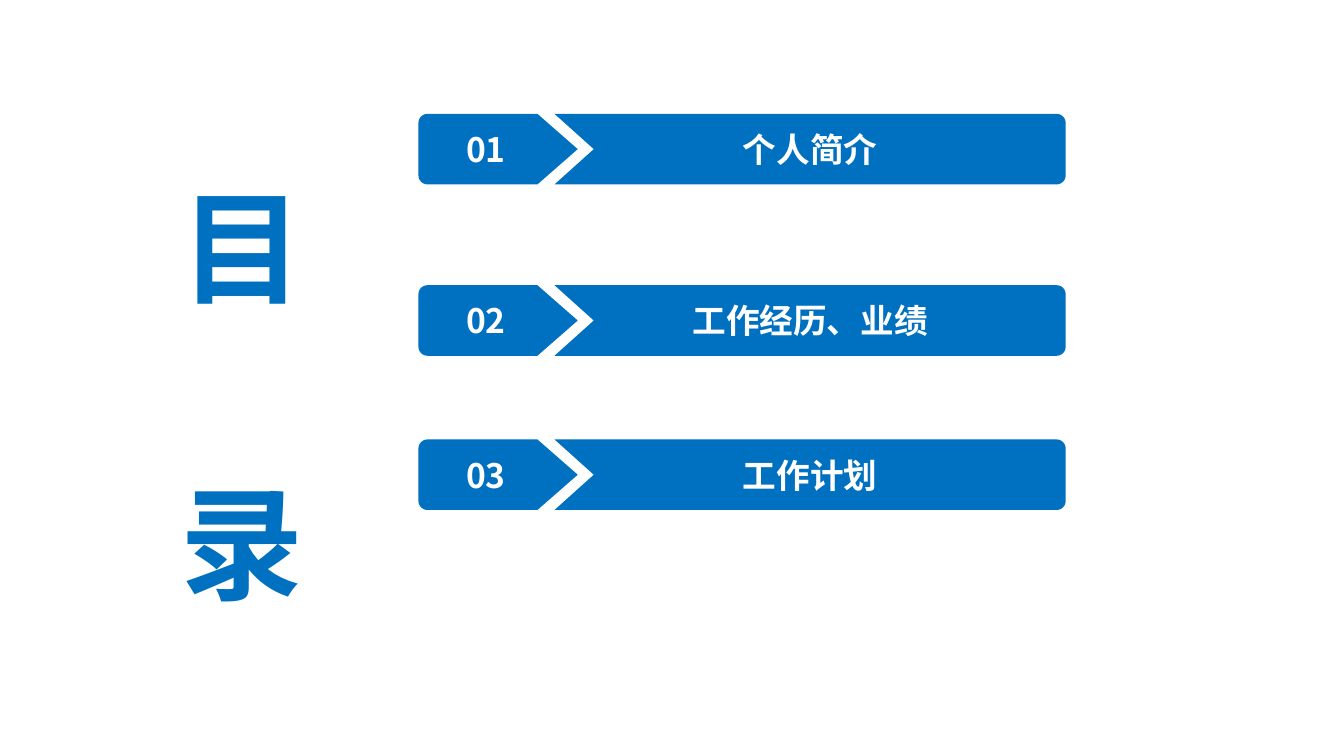
from math import cos, pi, sin

from pptx import Presentation
from pptx.dml.color import RGBColor
from pptx.enum.text import MSO_ANCHOR, MSO_AUTO_SIZE, PP_ALIGN
from pptx.oxml.xmlchemy import OxmlElement
from pptx.util import Inches, Pt

COLORS = {"blue": "0070C0", "white": "FFFFFF"}
FONT = "Noto Sans CJK SC"
ITEMS = [(1.13, "个人简介"), (2.83, "工作经历、业绩"), (4.36, "工作计划")]
RADIUS = 0.09


def write(s, text, size, color, align=PP_ALIGN.LEFT, anchor=MSO_ANCHOR.TOP,
          insets=(0.1, 0.05, 0.1, 0.05), line=None, spacing=None):
    """Put one bold paragraph into a shape."""
    tf = s.text_frame
    tf.word_wrap = True
    tf.vertical_anchor = anchor
    tf.margin_left, tf.margin_top, tf.margin_right, tf.margin_bottom = map(Inches, insets)
    p = tf.paragraphs[0]
    p.alignment = align
    if line:
        p.line_spacing = Pt(line)
    r = p.add_run()
    r.text = text
    r.font.size, r.font.bold, r.font.name = Pt(size), True, FONT
    r.font.color.rgb = RGBColor.from_string(COLORS[color])
    rPr = r.font._element
    if spacing:
        rPr.set("spc", str(round(spacing * 100)))
    ea = OxmlElement("a:ea")
    ea.set("typeface", FONT)
    rPr.append(ea)


def corner(cx, cy, start):
    """Return the points of a clockwise quarter circle from an angle in degrees."""
    angles = [(start + 15 * i) * pi / 180 for i in range(7)]
    return [(cx + RADIUS * cos(a), cy + RADIUS * sin(a)) for a in angles]


def outline(slide, points, text, right_inset):
    """Draw a blue outline with centred white text."""
    pts = [(Inches(x), Inches(y)) for x, y in points]
    builder = slide.shapes.build_freeform(*pts[0])
    builder.add_line_segments(pts[1:], close=True)
    s = builder.convert_to_shape()
    s.shadow.inherit = False
    s.fill.solid()
    s.fill.fore_color.rgb = RGBColor.from_string(COLORS["blue"])
    s.line.fill.background()
    write(s, text, 24, "white", align=PP_ALIGN.CENTER, anchor=MSO_ANCHOR.MIDDLE,
          insets=(0.11, 0.05, right_inset, 0.05))


def add_item(slide, x, y, w, h, number, title):
    """Draw a contents bar with its numbered arrow."""
    right, bottom, mid = x + w, y + h, y + h / 2
    top_c, bottom_c = y + RADIUS, bottom - RADIUS
    notch, tip = x + 1.35, x + 1.18
    bar = [(notch, y), *corner(right - RADIUS, top_c, -90),
           *corner(right - RADIUS, bottom_c, 0), (notch, bottom), (notch + 0.39, mid)]
    outline(slide, bar, title, 0.11)
    arrow = [(tip, y), (tip + 0.4, mid), (tip, bottom),
             *corner(x + RADIUS, bottom_c, 90), *corner(x + RADIUS, top_c, 180)]
    outline(slide, arrow, f"{number:02d}", 0.35)


def add_heading(slide, x, y, w, h):
    """Place the heading in a narrow box so that it runs downwards."""
    s = slide.shapes.add_textbox(Inches(x), Inches(y), Inches(w), Inches(h))
    write(s, "目 录", 88, "blue", insets=(0.1, 0.18, 0.1, 0.05), line=106, spacing=3.7)
    s.text_frame.auto_size = MSO_AUTO_SIZE.SHAPE_TO_FIT_TEXT


def main():
    """Build and save the contents slide."""
    prs = Presentation()
    prs.slide_width, prs.slide_height = Inches(13.33), Inches(7.5)
    slide = prs.slides.add_slide(prs.slide_layouts[6])
    add_heading(slide, 1.69, 1.51, 1.19, 3.06)
    for number, (y, title) in enumerate(ITEMS, 1):
        add_item(slide, 4.15, y, 6.42, 0.7, number, title)
    prs.save("out.pptx")


if __name__ == "__main__":
    main()
